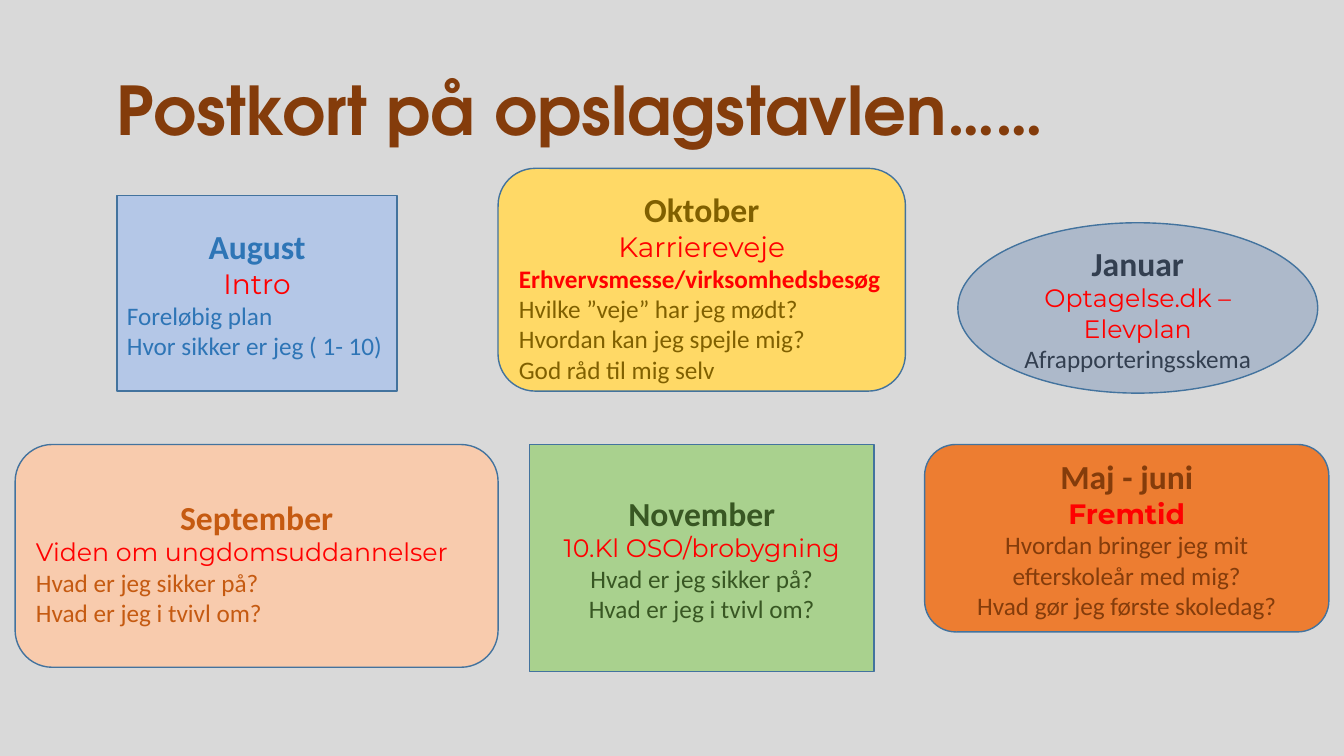
from pptx import Presentation
from pptx.dml.color import RGBColor
from pptx.enum.shapes import MSO_SHAPE
from pptx.enum.text import MSO_ANCHOR, PP_ALIGN
from pptx.util import Emu, Pt

PX = 9144
RECTANGLE = MSO_SHAPE.RECTANGLE
ROUNDED = MSO_SHAPE.ROUNDED_RECTANGLE
ELLIPSE = MSO_SHAPE.OVAL
MIDDLE = MSO_ANCHOR.MIDDLE
LEFT, CENTER = PP_ALIGN.LEFT, PP_ALIGN.CENTER
BODY_FONT, THEME_FONT, TITLE_FONT = "Calibri", "Montserrat", "TeX Gyre Adventor"
BROWN, RED, OUTLINE = "843C0B", "FF0000", "43739E"


def px(length):
    """Convert px to EMU."""
    return Emu(length * PX)


def color(hex_code):
    """Turn a hex string into a colour."""
    return RGBColor.from_string(hex_code)


def style_run(run, size, font_name, hex_code, bold=False):
    """Set the font of one run."""
    run.font.size = Pt(size)
    run.font.name = font_name
    run.font.color.rgb = color(hex_code)
    run.font.bold = bold


def add_title(slide, words, dots):
    """Add the slide title with its trailing dots."""
    box = slide.shapes.add_textbox(px(92), px(40), px(1150), px(145))
    frame = box.text_frame
    frame.word_wrap = True
    frame.vertical_anchor = MIDDLE
    frame.margin_left = px(24)
    paragraph = frame.paragraphs[0]
    paragraph.line_spacing = 0.9
    for text, font_name in ((words, TITLE_FONT), (dots, BODY_FONT)):
        run = paragraph.add_run()
        run.text = text
        style_run(run, 48, font_name, BROWN, True)


def heading(text, hex_code):
    """Describe the month line of a postcard."""
    return text, CENTER, 24, BODY_FONT, hex_code, True


def theme(text, size=18, align=CENTER, bold=False):
    """Describe the red theme line of a postcard."""
    return text, align, size, THEME_FONT, RED, bold


def body(texts, hex_code, align=CENTER, bold=False):
    """Describe the small lines of a postcard."""
    return [(text, align, 18, BODY_FONT, hex_code, bold) for text in texts]


def add_postcard(slide, kind, bounds, fill, lines, margin_top=5):
    """Add one filled shape with its lines of text."""
    shape = slide.shapes.add_shape(kind, *map(px, bounds))
    shape.shadow.inherit = False
    shape.fill.solid()
    shape.fill.fore_color.rgb = color(fill)
    shape.line.color.rgb = color(OUTLINE)
    shape.line.width = Pt(1)
    frame = shape.text_frame
    frame.word_wrap = True
    frame.vertical_anchor = MIDDLE
    frame.margin_top = px(margin_top)
    frame.text = "\n".join(line[0] for line in lines)
    for paragraph, (_, align, *font) in zip(frame.paragraphs, lines):
        paragraph.alignment = align
        style_run(paragraph.runs[0], *font)


def main():
    """Build the slide and save it."""
    presentation = Presentation()
    presentation.slide_width, presentation.slide_height = px(1333), px(750)
    slide = presentation.slides.add_slide(presentation.slide_layouts[6])
    slide.background.fill.solid()
    slide.background.fill.fore_color.rgb = color("D9D9D9")

    add_title(slide, "Postkort på opslagstavlen", "……")
    questions = ["Hvad er jeg sikker på?", "Hvad er jeg i tvivl om?"]

    blue, gold, orange, slate, green = "2E75B6", "806000", "C55A11", "333F50", "385723"
    add_postcard(slide, RECTANGLE, (116, 194, 278, 194), "B4C7E7", [
        heading("August", blue),
        theme("Intro", 20),
        *body(["Foreløbig plan", "Hvor sikker er jeg ( 1- 10)"], blue, LEFT),
    ])
    add_postcard(slide, ROUNDED, (494, 167, 404, 221), "FFD966", [
        heading("Oktober", gold),
        theme("Karriereveje", 20),
        *body(["Erhvervsmesse/virksomhedsbesøg"], RED, LEFT, True),
        *body(["Hvilke ”veje” har jeg mødt?", "Hvordan kan jeg spejle mig?",
               "God råd til mig selv"], gold, LEFT),
    ], margin_top=19)
    add_postcard(slide, ROUNDED, (15, 441, 479, 221), "F8CBAD", [
        heading("September", orange),
        theme("Viden om ungdomsuddannelser", align=LEFT),
        *body(questions, orange, LEFT),
    ], margin_top=17)
    add_postcard(slide, ELLIPSE, (950, 221, 357, 169), "ADB9CA", [
        heading("Januar", slate),
        theme("Optagelse.dk – Elevplan"),
        *body(["Afrapporteringsskema"], slate),
    ])
    add_postcard(slide, RECTANGLE, (525, 441, 342, 225), "A9D18E", [
        heading("November", green),
        theme("10.Kl OSO/brobygning"),
        *body(questions, green),
    ])
    add_postcard(slide, ROUNDED, (917, 441, 401, 186), "ED7D31", [
        heading("Maj - juni", BROWN),
        theme("Fremtid", 20, bold=True),
        *body(["Hvordan bringer jeg mit efterskoleår med mig?",
               "Hvad gør jeg første skoledag?"], BROWN),
    ])
    presentation.save("out.pptx")


if __name__ == "__main__":
    main()
